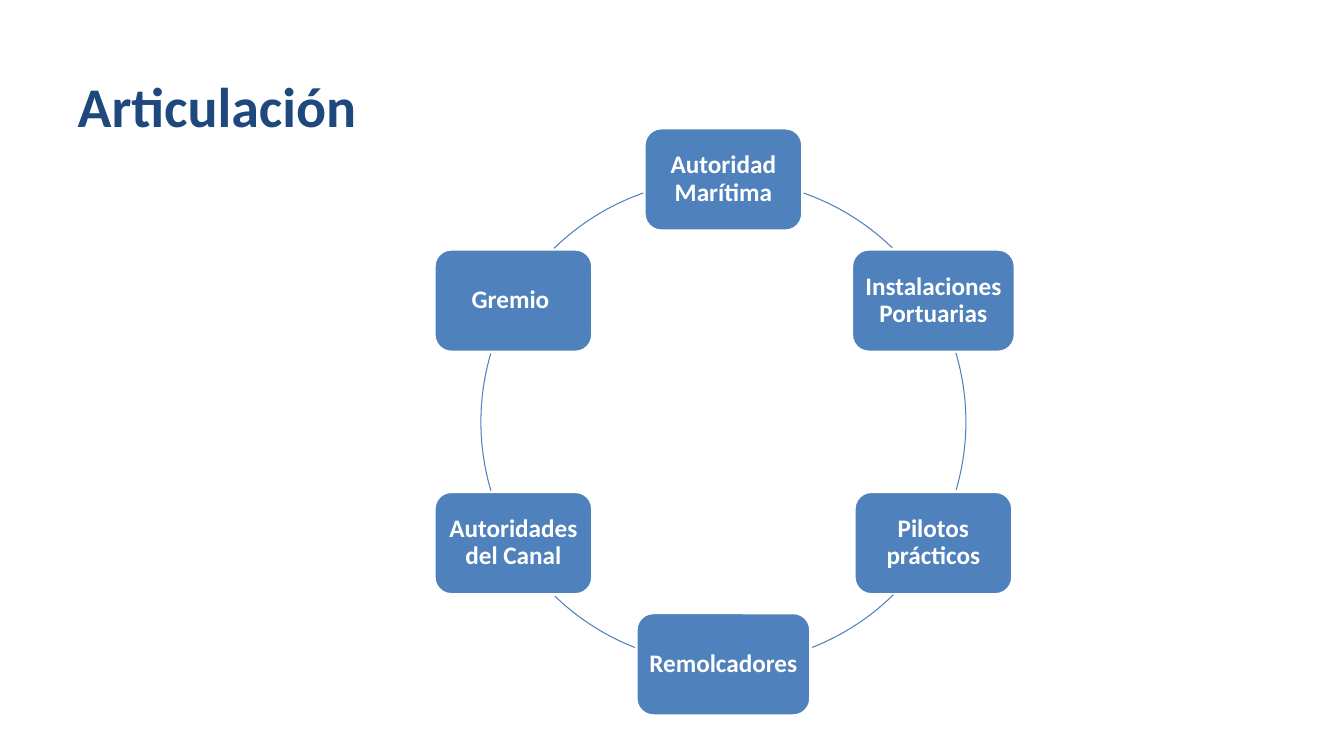
from math import cos, radians, sin

from pptx import Presentation
from pptx.dml.color import RGBColor
from pptx.enum.shapes import MSO_SHAPE
from pptx.enum.text import MSO_ANCHOR, PP_ALIGN
from pptx.util import Inches, Pt

BLUE, NAVY, WHITE = "4F81BD", "1F497D", "FFFFFF"
ACTOR_HEIGHT = 1.02
ACTORS = [
    ("Autoridad Marítima", 1.57),
    ("Instalaciones Portuarias", 1.62),
    ("Pilotos prácticos", 1.57),
    ("Remolcadores", 1.73),
    ("Autoridades del Canal", 1.57),
    ("Gremio ", 1.57),
]
LINKS = [(-70.7, -45.7), (-16.5, 16.5), (45.5, 68.6),
         (111.4, 134.5), (163.5, 196.5), (225.7, 250.7)]


def colour(hex_value):
    """Return the colour for a hex string."""
    return RGBColor.from_string(hex_value)


def write(frame, text, size, ink, align, spacing=None, inset=None):
    """Write one bold, vertically centred paragraph into a text frame."""
    frame.word_wrap = True
    frame.vertical_anchor = MSO_ANCHOR.MIDDLE
    if inset is not None:
        frame.margin_left = frame.margin_right = Inches(inset)
        frame.margin_top = frame.margin_bottom = Inches(inset)
    paragraph = frame.paragraphs[0]
    paragraph.alignment = align
    paragraph.line_spacing = spacing
    run = paragraph.add_run()
    run.text = text
    run.font.name = "Calibri"
    run.font.size = Pt(size)
    run.font.bold = True
    run.font.color.rgb = colour(ink)


def add_heading(slide, left, top, width, height):
    """Place the slide title in the given box."""
    heading = slide.shapes.title
    heading.left, heading.top = Inches(left), Inches(top)
    heading.width, heading.height = Inches(width), Inches(height)
    write(heading.text_frame, "Articulación", 40, NAVY, PP_ALIGN.LEFT)


def add_outlined(slide, preset, box, line, weight):
    """Add a shadowless preset shape with the given outline."""
    shape = slide.shapes.add_shape(preset, *map(Inches, box))
    shape.shadow.inherit = False
    shape.line.color.rgb = colour(line)
    shape.line.width = Pt(weight)
    return shape


def add_link(slide, box, start, end):
    """Draw the part of the ring between two angles in degrees."""
    link = add_outlined(slide, MSO_SHAPE.ARC, box, BLUE, 0.75)
    link.fill.background()
    link.adjustments[0] = start % 360 * 0.6
    link.adjustments[1] = end % 360 * 0.6


def add_actor(slide, name, centre_x, centre_y, width):
    """Add one actor's rounded box around its centre."""
    box = (centre_x - width / 2, centre_y - ACTOR_HEIGHT / 2, width, ACTOR_HEIGHT)
    actor = add_outlined(slide, MSO_SHAPE.ROUNDED_RECTANGLE, box, WHITE, 2)
    actor.fill.solid()
    actor.fill.fore_color.rgb = colour(BLUE)
    write(actor.text_frame, name, 18, WHITE, PP_ALIGN.CENTER, spacing=0.9, inset=0.07)


def add_cycle(slide, left, top, diameter):
    """Spread the actors clockwise from the top of the ring and link them."""
    radius = diameter / 2
    step = 360 / len(ACTORS)
    for index, ((name, width), (start, end)) in enumerate(zip(ACTORS, LINKS)):
        angle = radians(index * step - 90)
        add_actor(slide, name, left + radius * (1 + cos(angle)),
                  top + radius * (1 + sin(angle)), width)
        add_link(slide, (left, top, diameter, diameter), start, end)


def main():
    """Build and save the slide."""
    presentation = Presentation()
    presentation.slide_width = Inches(13.33)
    presentation.slide_height = Inches(7.5)
    slide = presentation.slides.add_slide(presentation.slide_layouts[5])
    add_heading(slide, 0.67, 0.29, 9.41, 1.5)
    add_cycle(slide, 4.77, 1.78, 4.81)
    presentation.save("out.pptx")


if __name__ == "__main__":
    main()
